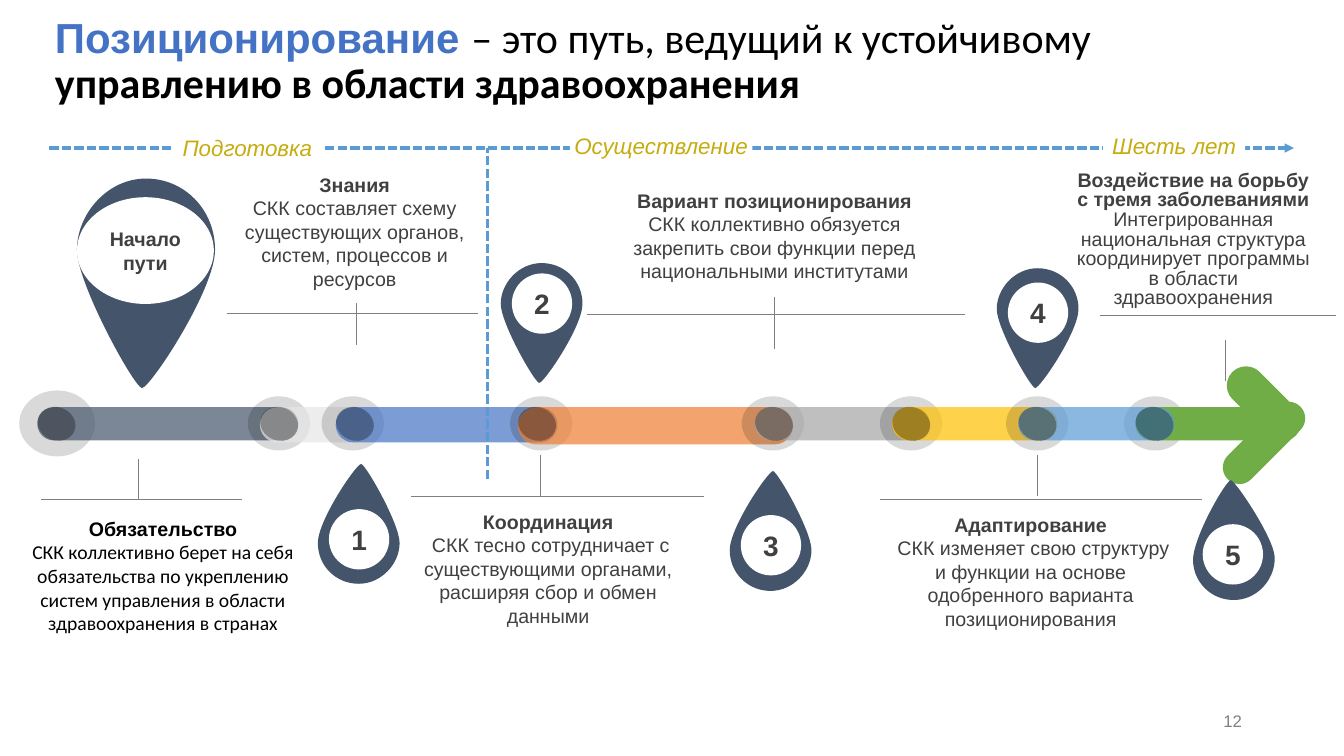
"""Builds the slide on positioning as a road to sustainable health governance."""
from dataclasses import dataclass
from typing import Any, Optional

from lxml import etree
from pptx import Presentation
from pptx import util as u
from pptx.dml.color import RGBColor
from pptx.enum import dml, shapes, text
from pptx.oxml.ns import qn

BLACK = RGBColor(0x00, 0x00, 0x00)
WHITE = RGBColor(0xFF, 0xFF, 0xFF)
CHARCOAL = RGBColor(0x40, 0x40, 0x40)
GRAY = RGBColor(0x80, 0x80, 0x80)
SLATE = RGBColor(0x44, 0x54, 0x6A)
PALE = RGBColor(0xE7, 0xE6, 0xE6)
BLUE = RGBColor(0x44, 0x72, 0xC4)
ORANGE = RGBColor(0xED, 0x7D, 0x31)
SILVER = RGBColor(0xA5, 0xA5, 0xA5)
YELLOW = RGBColor(0xFF, 0xC0, 0x00)
SKY = RGBColor(0x5B, 0x9B, 0xD5)
GREEN = RGBColor(0x70, 0xAD, 0x47)
OLIVE = RGBColor(0xC6, 0xAC, 0x0F)

ROAD_TOP, ROAD_MIDDLE, ROAD_HEIGHT = 10.26, 10.67, 0.84
PIN_START = (0.0, 0.34)
PIN_CURVES = (
    ((0.0, 0.17), (0.22, 0.0), (0.5, 0.0)),
    ((0.78, 0.0), (1.0, 0.15), (1.0, 0.34)),
    ((1.0, 0.53), (0.53, 1.0), (0.47, 1.0)),
    ((0.41, 0.99), (0.0, 0.5), PIN_START),
)


@dataclass(frozen=True)
class Box:
    left: float
    top: float
    width: float
    height: float

    def lengths(self) -> tuple[u.Length, ...]:
        return tuple(u.Cm(v) for v in (self.left, self.top, self.width, self.height))


@dataclass(frozen=True)
class Stage:
    halo_center: float
    left: float
    width: float
    color: RGBColor
    height: float = ROAD_HEIGHT
    opacity: Optional[int] = 70
    halo_width: float = 1.57


@dataclass(frozen=True)
class Callout:
    heading: str
    detail: str
    box: Box
    base: tuple[float, float, float]
    stem: tuple[float, float, float]
    color: RGBColor = CHARCOAL
    detail_font: str = "Arial"
    spacing: Optional[u.Length] = None


@dataclass(frozen=True)
class Pin:
    label: str
    box: Box
    window: Box
    rotation: float = 0
    size: int = 20


def numbered_pin(label: str, left: float, top: float, window_top: float, rotation: float = 0) -> Pin:
    return Pin(label, Box(left, top, 2.06, 3.02), Box(left + 0.28, window_top, 1.52, 1.52), rotation)


STAGES = (
    Stage(1.44, 0.94, 6.58, SLATE, halo_width=1.91),
    Stage(7.03, 6.55, 2.82, PALE, height=0.89),
    Stage(8.89, 8.46, 5.59, BLUE, height=0.89),
    Stage(13.64, 13.05, 6.94, ORANGE, height=0.94),
    Stage(19.48, 19.02, 4.42, SILVER),
    Stage(22.96, 22.48, 4.17, YELLOW),
    Stage(29.11, 28.61, 4.17, GREEN, opacity=None),
    Stage(26.14, 25.66, 3.94, SKY),
)
ARROW_STROKES = ((Box(30.73, 9.68, 2.24, 0.97), 45), (Box(30.56, 10.74, 2.59, 0.84), 315))
CALLOUTS = (
    Callout("Знания", "СКК составляет схему существующих органов, систем, процессов и ресурсов",
            Box(5.7, 4.23, 6.48, 5.05), (5.71, 12.04, 7.9), (8.97, 7.63, 8.7)),
    Callout("Вариант позиционирования",
            "СКК коллективно обязуется закрепить свои функции перед национальными институтами",
            Box(15.15, 4.63, 8.74, 2.64), (14.79, 24.33, 7.92), (19.52, 7.48, 8.79)),
    Callout("Воздействие на борьбу с тремя заболеваниями",
            "Интегрированная национальная структура координирует программы в области здравоохранения",
            Box(26.81, 4.2, 6.53, 3.76), (27.72, 33.68, 7.95), (30.89, 8.56, 9.6), spacing=u.Pt(14)),
    Callout("Обязательство",
            "СКК коллективно берет на себя обязательства по укреплению систем управления "
            "в области здравоохранения в странах",
            Box(0.49, 12.9, 7.24, 3.84), (1.03, 6.1, 12.59), (3.48, 11.56, 12.59), BLACK, "Calibri"),
    Callout("Адаптирование",
            " СКК изменяет свою структуру и функции на основе одобренного варианта позиционирования",
            Box(22.05, 12.79, 7.85, 3.25), (22.17, 30.3, 12.59), (26.13, 11.46, 12.5)),
    Callout("Координация",
            " СКК тесно сотрудничает с существующими органами, расширяя сбор и обмен данными",
            Box(9.89, 12.72, 7.85, 3.25), (10.37, 17.75, 12.5), (13.61, 11.46, 12.5)),
)
PINS = (
    Pin("Начало пути", Box(1.94, 4.5, 3.48, 5.28), Box(1.94, 4.97, 3.45, 2.69), size=14),
    numbered_pin("1", 8.01, 11.69, 12.83, 180),
    numbered_pin("2", 12.62, 6.63, 6.89),
    numbered_pin("3", 18.39, 11.87, 12.98, 180),
    numbered_pin("4", 25.12, 6.76, 7.12),
    numbered_pin("5", 30.03, 12.1, 13.21, 176),
)
PHASES = (
    ("Подготовка", Box(4.33, 3.38, 3.81, 0.69)),
    ("Осуществление", Box(14.36, 3.33, 4.6, 0.69)),
    ("Шесть лет", Box(27.8, 3.33, 3.58, 0.69)),
)


def assign(target: Any, values: dict[str, Any]) -> None:
    for key, value in values.items():
        setattr(target, key, value)


def write(paragraph: Any, words: str, size: int, color: RGBColor, font: str = "Arial", **style: bool) -> None:
    run = paragraph.add_run()
    run.text = words
    assign(run.font, {"name": font, "size": u.Pt(size), **style})
    run.font.color.rgb = color


def paint(figure: Any, color: RGBColor, opacity: Optional[int] = None) -> None:
    figure.shadow.inherit = False
    figure.line.fill.background()
    figure.fill.solid()
    figure.fill.fore_color.rgb = color
    if opacity is not None:
        tint = figure._element.spPr.find(qn("a:solidFill")).find(qn("a:srgbClr"))
        etree.SubElement(tint, qn("a:alpha")).set("val", str(opacity * 1000))


def draw(slide: Any, kind: Any, box: Box, color: RGBColor, opacity: Optional[int] = None, rotation: float = 0) -> Any:
    figure = slide.shapes.add_shape(kind, *box.lengths())
    paint(figure, color, opacity)
    figure.rotation = rotation
    if kind == shapes.MSO_SHAPE.ROUNDED_RECTANGLE:
        figure.adjustments[0] = 0.5
    return figure


def draw_line(slide: Any, ends: tuple[float, ...], color: RGBColor = GRAY, width: float = 0.5,
              dashed: bool = False, arrow: bool = False) -> None:
    rule = slide.shapes.add_connector(shapes.MSO_CONNECTOR.STRAIGHT, *(u.Cm(v) for v in ends))
    rule.line.color.rgb = color
    rule.line.width = u.Pt(width)
    if dashed:
        rule.line.dash_style = dml.MSO_LINE.SQUARE_DOT
    properties = rule._element.spPr
    if arrow:
        etree.SubElement(properties.find(qn("a:ln")), qn("a:tailEnd")).set("type", "triangle")
    etree.SubElement(properties, qn("a:effectLst"))


def draw_road(slide: Any) -> None:
    oval, bar = shapes.MSO_SHAPE.OVAL, shapes.MSO_SHAPE.ROUNDED_RECTANGLE
    for stage in STAGES:
        width, height = stage.halo_width, stage.halo_width * 0.87
        draw(slide, oval, Box(stage.halo_center - width / 2, ROAD_MIDDLE - height / 2, width, height), BLACK, 15)
        draw(slide, bar, Box(stage.left, ROAD_TOP, stage.width, stage.height), stage.color, stage.opacity)
    for box, rotation in ARROW_STROKES:
        draw(slide, bar, box, GREEN, rotation=rotation)
    for stage in STAGES:
        draw(slide, oval, Box(stage.left, ROAD_TOP, 0.97, ROAD_HEIGHT), BLACK, 30, 21.3)


def draw_callout(slide: Any, callout: Callout) -> None:
    frame = slide.shapes.add_textbox(*callout.box.lengths()).text_frame
    frame.word_wrap = True
    heading, detail = frame.paragraphs[0], frame.add_paragraph()
    for paragraph in (heading, detail):
        assign(paragraph, {"alignment": text.PP_ALIGN.CENTER, "line_spacing": callout.spacing})
    write(heading, callout.heading, 14, callout.color, bold=True)
    write(detail, callout.detail, 14, callout.color, callout.detail_font)
    start, end, level = callout.base
    draw_line(slide, (start, level, end, level))
    x, top, bottom = callout.stem
    draw_line(slide, (x, top, x, bottom))


def draw_drop(slide: Any, box: Box) -> Any:
    left, top, width, height = box.lengths()
    corners = [(left + x * width, top + y * height) for x, y in (PIN_START, *(curve[-1] for curve in PIN_CURVES))]
    builder = slide.shapes.build_freeform(*corners[0])
    builder.add_line_segments(corners[1:], close=True)
    drop = builder.convert_to_shape()
    sides = list(drop._element.iter(qn("a:lnTo")))
    for side, curve in zip(sides, PIN_CURVES):
        bend = etree.Element(qn("a:cubicBezTo"))
        for x, y in curve:
            etree.SubElement(bend, qn("a:pt"), x=str(round(x * width)), y=str(round(y * height)))
        side.getparent().replace(side, bend)
    return drop


def draw_pin(slide: Any, pin: Pin) -> None:
    drop = draw_drop(slide, pin.box)
    paint(drop, SLATE)
    drop.rotation = pin.rotation
    window = draw(slide, shapes.MSO_SHAPE.OVAL, pin.window, WHITE)
    write(window.text_frame.paragraphs[0], pin.label, pin.size, CHARCOAL, bold=True)


def draw_phases(slide: Any) -> None:
    draw_line(slide, (1.24, 3.73, 32.61, 3.73), SKY, 2.25, dashed=True, arrow=True)
    for words, box in PHASES:
        frame = draw(slide, shapes.MSO_SHAPE.RECTANGLE, box, WHITE).text_frame
        assign(frame, dict.fromkeys(("margin_left", "margin_top", "margin_right", "margin_bottom"), 0))
        write(frame.paragraphs[0], words, 16, OLIVE, italic=True)
    draw_line(slide, (12.29, 12.07, 12.29, 3.73), SKY, 2.25, dashed=True)


def fill_title(slide: Any) -> None:
    title = slide.shapes.title
    assign(title, dict(zip(("left", "top", "width", "height"), Box(1.13, 0.79, 32.33, 1.57).lengths())))
    assign(title.text_frame, {"vertical_anchor": text.MSO_ANCHOR.MIDDLE, "auto_size": text.MSO_AUTO_SIZE.NONE,
                              "word_wrap": True})
    paragraph = title.text_frame.paragraphs[0]
    assign(paragraph, {"alignment": text.PP_ALIGN.LEFT, "line_spacing": 0.9})
    write(paragraph, "Позиционирование ", 30, BLUE, bold=True)
    write(paragraph, "– это путь, ведущий к устойчивому ", 30, BLACK, "Calibri", bold=False)
    paragraph.add_line_break()
    write(paragraph, "управлению в области здравоохранения", 30, BLACK, "Calibri", bold=True)


def add_page_number(slide: Any) -> None:
    frame = slide.shapes.add_textbox(*Box(23.93, 17.65, 7.62, 1.02).lengths()).text_frame
    assign(frame, {"word_wrap": True, "vertical_anchor": text.MSO_ANCHOR.MIDDLE})
    frame.paragraphs[0].alignment = text.PP_ALIGN.RIGHT
    write(frame.paragraphs[0], "12", 12, GRAY)


def main() -> None:
    deck = Presentation()
    assign(deck, {"slide_width": u.Cm(33.87), "slide_height": u.Cm(19.05)})
    slide = deck.slides.add_slide(deck.slide_layouts[5])
    fill_title(slide)
    draw_road(slide)
    for callout in CALLOUTS:
        draw_callout(slide, callout)
    for pin in PINS:
        draw_pin(slide, pin)
    draw_phases(slide)
    add_page_number(slide)
    deck.save("out.pptx")


if __name__ == "__main__":
    main()
